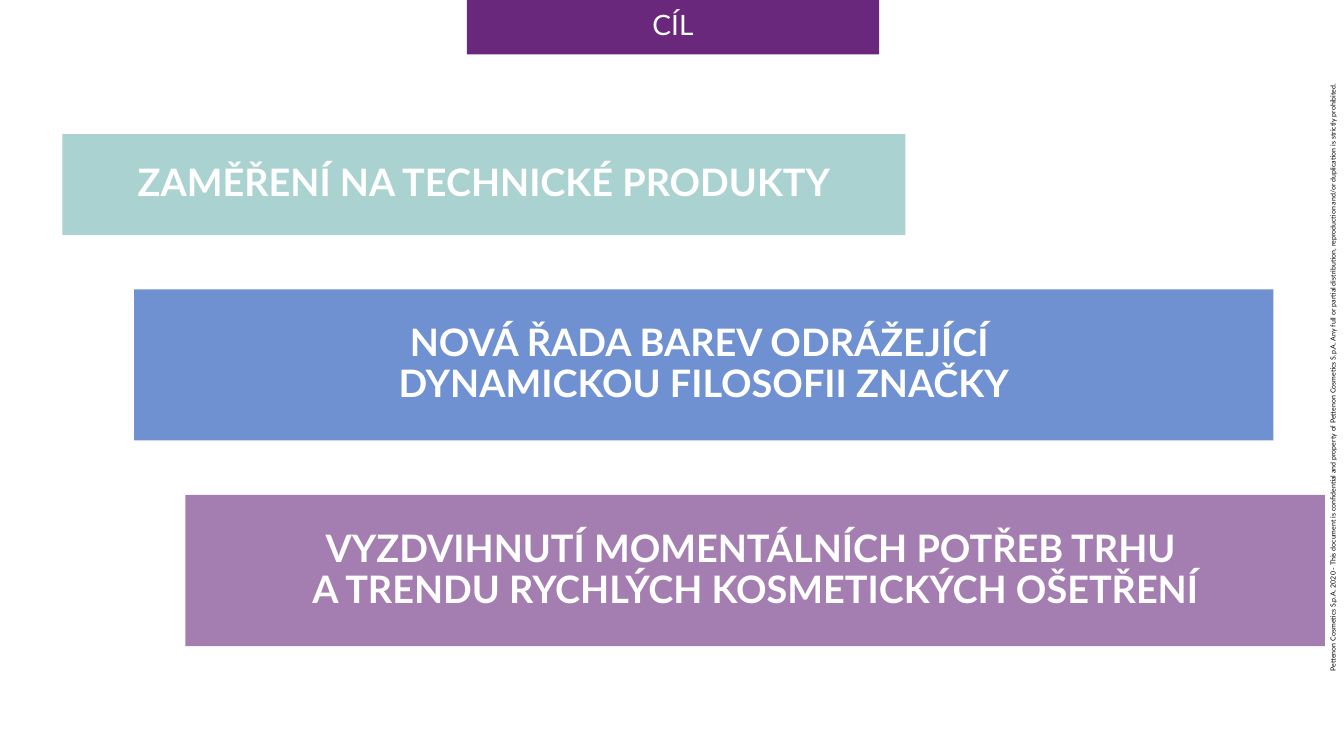
import pptx
import pptx.util
import pptx.dml.color
import pptx.enum.shapes
import pptx.enum.text
import lxml.etree

PX = 9144  # 100 px to the inch

THEME = {
    "font": "Lato",
    "purple": "6A287D", "teal": "72B5B1", "blue": "1046B3",
    "white": "FFFFFF", "black": "000000",
    "title": 20, "banner": 27, "notice": 5,
    "banner_opacity": 60,
}


def add_bar(page, bounds, colour, opacity=100):
    bar = page.shapes.add_shape(pptx.enum.shapes.MSO_SHAPE.RECTANGLE,
                                *[length * PX for length in bounds])
    bar.shadow.inherit = False
    bar.line.fill.background()
    bar.fill.solid()
    bar.fill.fore_color.rgb = pptx.dml.color.RGBColor.from_string(THEME[colour])
    if opacity < 100:
        tint = bar.element.spPr.find(".//" + pptx.oxml.ns.qn("a:srgbClr"))
        alpha = lxml.etree.SubElement(tint, pptx.oxml.ns.qn("a:alpha"))
        alpha.set("val", str(opacity * 1000))
    return bar


def write(box, text, size, colour, inset=3, spacing=0.9, bold=False):
    frame = box.text_frame
    frame.text = text
    frame.word_wrap = True
    frame.auto_size = pptx.enum.text.MSO_AUTO_SIZE.NONE
    frame.vertical_anchor = pptx.enum.text.MSO_ANCHOR.MIDDLE
    frame.margin_left = frame.margin_right = inset * PX
    frame.margin_top = frame.margin_bottom = inset * PX
    for para in frame.paragraphs:
        para.alignment = pptx.enum.text.PP_ALIGN.CENTER
        para.line_spacing = spacing
        para.space_before = pptx.util.Pt(0)
        for span in para.runs:
            span.font.name = THEME["font"]
            span.font.size = pptx.util.Pt(THEME[size])
            span.font.bold = bold
            span.font.color.rgb = pptx.dml.color.RGBColor.from_string(THEME[colour])


deck = pptx.Presentation()
deck.slide_width, deck.slide_height = 1333 * PX, 750 * PX
page = deck.slides.add_slide(deck.slide_layouts[5])

# Copyright notice along the right edge
notice = page.shapes.add_textbox(935 * PX, 367 * PX, 772 * PX, 15 * PX)
notice.rotation = 270
write(notice, "Pettenon Cosmetics S.p.A. 2020 - This document is confidential and "
      "property of Pettenon Cosmetics S.p.A. Any full or partial distribution, "
      "reproduction and/or duplication is strictly prohibited.",
      "notice", "black", spacing=1.2)

# Title on its purple tab
add_bar(page, (463, -1, 409, 55), "purple")
title = page.shapes.title
title.left, title.top, title.width, title.height = [
    length * PX for length in (481, 8, 373, 36)]
write(title, "CÍL", "title", "white")
page.shapes.element.append(title.element)  # bring the title above its tab

# Staggered goal banners, separated by equal gaps
GAP = 54
top = 133
goals = [
    (62, 836, 100, "teal", 6, "ZAMĚŘENÍ NA TECHNICKÉ PRODUKTY"),
    (133, 1130, 150, "blue", 3,
     "NOVÁ ŘADA BAREV ODRÁŽEJÍCÍ \vDYNAMICKOU FILOSOFII ZNAČKY"),
    (184, 1130, 150, "purple", 3,
     "VYZDVIHNUTÍ MOMENTÁLNÍCH POTŘEB TRHU \v"
     "A TRENDU RYCHLÝCH KOSMETICKÝCH OŠETŘENÍ"),
]
for left, width, height, colour, inset, text in goals:
    banner = add_bar(page, (left, top, width, height), colour,
                     THEME["banner_opacity"])
    write(banner, text, "banner", "white", inset=inset, bold=True)
    top += height + GAP

deck.save("out.pptx")
